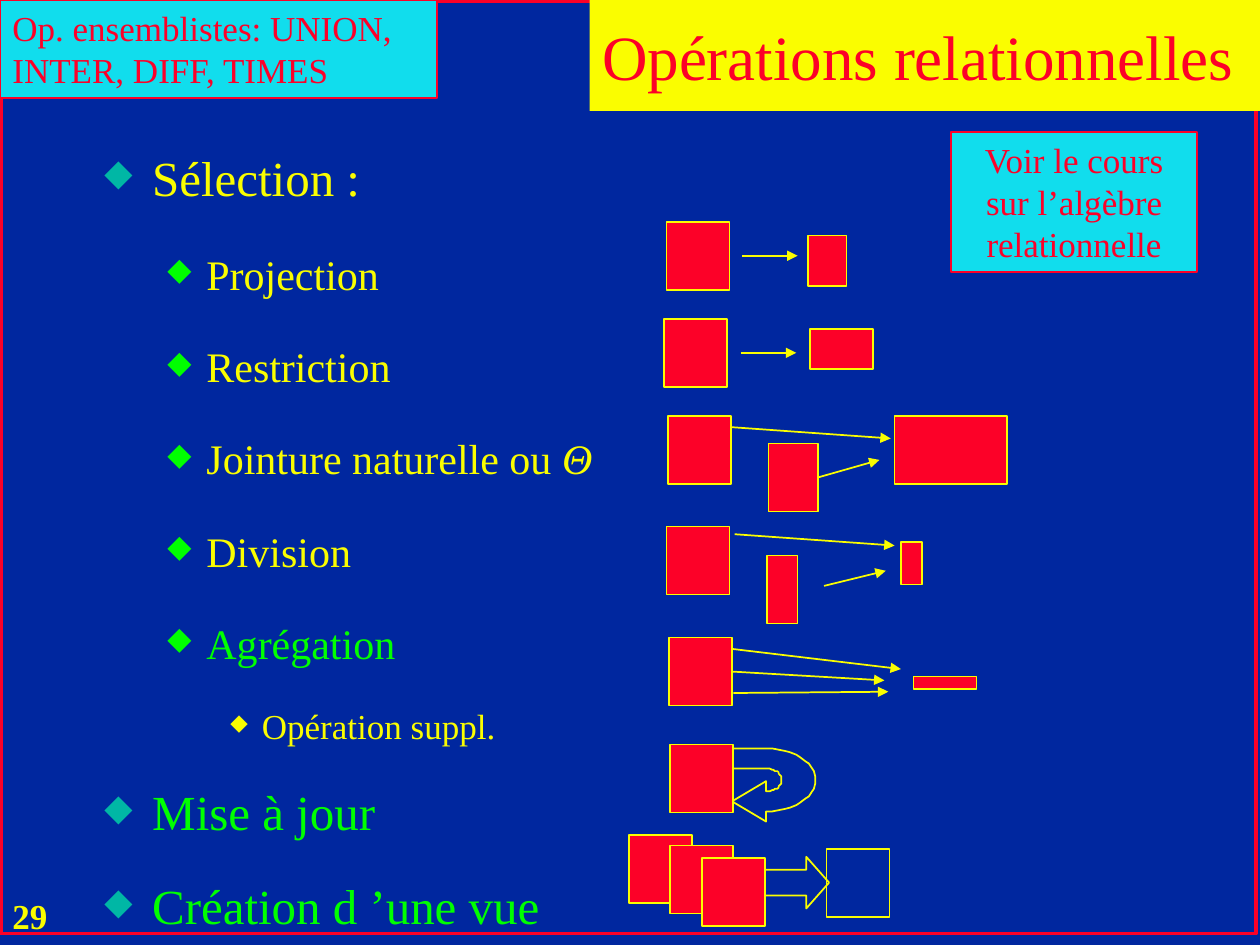
"""Build the relational operations slide."""
from lxml import etree
from pptx import Presentation
from pptx.dml.color import RGBColor
from pptx.enum.shapes import MSO_CONNECTOR, MSO_SHAPE
from pptx.enum.text import MSO_ANCHOR, PP_ALIGN
from pptx.oxml.ns import qn
from pptx.util import Pt

PX = 9144
FONT = "Times New Roman"
NAVY = RGBColor(0x00, 0x27, 0x9F)
RED = RGBColor(0xFC, 0x01, 0x28)
YELLOW = RGBColor(0xFA, 0xFD, 0x00)
CYAN = RGBColor(0x11, 0xDD, 0xED)
GREEN = RGBColor(0x00, 0xFF, 0x00)
TEAL = RGBColor(0x00, 0xB7, 0xA5)
RECT, ARROW = MSO_SHAPE.RECTANGLE, MSO_SHAPE.RIGHT_ARROW
STRAIGHT = MSO_CONNECTOR.STRAIGHT
LEFT, CENTER = PP_ALIGN.LEFT, PP_ALIGN.CENTER
TOP, MIDDLE = MSO_ANCHOR.TOP, MSO_ANCHOR.MIDDLE
RIGHT_SIDE = 3
TABLE_W, TABLE_H = 50, 54

LEVELS = [
    {"size": 28, "margin": 38, "hang": 38, "bullet": TEAL, "scale": 75, "spacing": 1.4},
    {"size": 24, "margin": 81, "hang": 31, "bullet": GREEN, "scale": 75, "spacing": 1.6},
    {"size": 20, "margin": 125, "hang": 25, "bullet": YELLOW, "scale": 65, "spacing": 1.6},
]
OUTLINE = [
    (0, "Sélection :", YELLOW, 1.0),
    (1, "Projection", YELLOW, None),
    (1, "Restriction", YELLOW, None),
    (1, "Jointure naturelle ou Θ", YELLOW, None),
    (1, "Division", YELLOW, None),
    (1, "Agrégation", GREEN, None),
    (2, "Opération suppl.", YELLOW, None),
    (0, "Mise à jour", GREEN, None),
    (0, "Création d ’une vue", GREEN, None),
]
SOURCES = [(529, 176), (527, 253), (530, 330), (529, 418)]
VIEW_SOURCES = [(499, 663), (532, 671), (557, 681)]
RESULTS = [
    (641, 187, 31, 40), (643, 261, 50, 32), (710, 330, 89, 54),
    (609, 441, 24, 54), (715, 430, 17, 34), (725, 537, 50, 10),
]
ARROWS = [
    (589, 203, 633, 203), (588, 280, 632, 280), (580, 339, 707, 348),
    (583, 424, 710, 433), (654, 465, 703, 453),
    (581, 515, 715, 531), (582, 550, 705, 549),
]
U_TURN = [
    (581, 636), (608, 652), (608, 644),
    ((629, 644), (647, 633), (647, 619)),
    ((647, 605), (629, 594), (608, 594)),
    (547, 594), (547, 610), (608, 610),
    ((615, 610), (620, 614), (620, 618)), (620, 620),
    ((620, 624), (615, 628), (608, 628)), (608, 620),
]


def bezier(points, steps=12):
    """Return points along a cubic curve, without its start."""
    curve = []
    for i in range(1, steps + 1):
        t = i / steps
        weights = ((1 - t) ** 3, 3 * t * (1 - t) ** 2, 3 * t * t * (1 - t), t ** 3)
        curve.append(tuple(sum(w * p[axis] for w, p in zip(weights, points))
                           for axis in (0, 1)))
    return curve


class Deck:
    """Hold the style and the current slide."""

    def __init__(self, prs):
        self.s = prs.slides.add_slide(prs.slide_layouts[6])
        self.s.background.fill.solid()
        self.s.background.fill.fore_color.rgb = NAVY

    def paint(self, sp, fill, line, width=1):
        """Set fill and outline and drop the shadow."""
        sp.shadow.inherit = False
        if fill is None:
            sp.fill.background()
        else:
            sp.fill.solid()
            sp.fill.fore_color.rgb = fill
        if line is None:
            sp.line.fill.background()
        else:
            sp.line.color.rgb = line
            sp.line.width = Pt(width)
        return sp

    def shape(self, x, y, w, h, fill=RED, line=YELLOW, width=1, kind=RECT):
        """Add a preset shape."""
        sp = self.s.shapes.add_shape(kind, x * PX, y * PX, w * PX, h * PX)
        return self.paint(sp, fill, line, width)

    def table(self, x, y, fill=RED):
        """Add the square that stands for a relation."""
        return self.shape(x, y, TABLE_W, TABLE_H, fill)

    def run(self, p, text, size, color, **extra):
        """Add a styled run."""
        r = p.add_run()
        r.text = text
        r.font.color.rgb = color
        for name, value in {"name": FONT, "size": Pt(size), **extra}.items():
            setattr(r.font, name, value)

    def frame(self, sp, anchor=TOP, wrap=True):
        """Prepare a text frame."""
        tf = sp.text_frame
        for name, value in {"word_wrap": wrap, "vertical_anchor": anchor}.items():
            setattr(tf, name, value)
        return tf

    def label(self, sp, text, size, color, align=LEFT, anchor=TOP, wrap=True, **extra):
        """Write one paragraph in a shape."""
        p = self.frame(sp, anchor, wrap).paragraphs[0]
        p.alignment = align
        self.run(p, text, size, color, **extra)

    def box(self, x, y, w, h):
        """Add an empty text box."""
        return self.s.shapes.add_textbox(x * PX, y * PX, w * PX, h * PX)

    def outline(self, x, y, w, h, items):
        """Add the bulleted outline."""
        tf = self.frame(self.box(x, y, w, h))
        for i, (level, text, color, spacing) in enumerate(items):
            style = LEVELS[level]
            p = tf.add_paragraph() if i else tf.paragraphs[0]
            for name, value in {"level": level, "space_before": Pt(6.7),
                                "line_spacing": spacing or style["spacing"]}.items():
                setattr(p, name, value)
            self.bullet(p, style)
            plain, theta, _ = text.partition("Θ")
            self.run(p, plain, style["size"], color)
            if theta:
                self.run(p, theta, style["size"], color, italic=True)

    def bullet(self, p, style):
        """Give a paragraph its diamond and hanging indent."""
        ppr = p._p.get_or_add_pPr()
        ppr.set("marL", str(style["margin"] * PX))
        ppr.set("indent", str(-style["hang"] * PX))
        color = etree.SubElement(ppr, qn("a:buClr"))
        etree.SubElement(color, qn("a:srgbClr"), val=str(style["bullet"]))
        etree.SubElement(ppr, qn("a:buSzPct"), val=str(style["scale"] * 1000))
        etree.SubElement(ppr, qn("a:buChar"), char="◆")

    def arrow(self, x1, y1, x2, y2, source=None):
        """Add an arrow, joined to the right side of its source if given."""
        c = self.s.shapes.add_connector(STRAIGHT, x1 * PX, y1 * PX, x2 * PX, y2 * PX)
        if source is not None:
            c.begin_connect(source, RIGHT_SIDE)
        c.line.color.rgb = YELLOW
        c.line.width = Pt(1)
        etree.SubElement(c.line._get_or_add_ln(), qn("a:tailEnd"), type="triangle")
        etree.SubElement(c._element.spPr, qn("a:effectLst"))

    def freeform(self, segments):
        """Add an unfilled closed outline of lines and curves."""
        points = [segments[0]]
        for seg in segments[1:]:
            points += bezier((points[-1], *seg)) if len(seg) == 3 else [seg]
        builder = self.s.shapes.build_freeform(*points[0], scale=PX)
        builder.add_line_segments(points[1:], close=True)
        self.paint(builder.convert_to_shape(), None, YELLOW)


def main():
    """Draw the slide and save it."""
    prs = Presentation()
    prs.slide_width, prs.slide_height = 1000 * PX, 750 * PX
    deck = Deck(prs)
    deck.label(deck.box(0, 705, 69, 43), "29", 20, YELLOW, wrap=False, bold=True)
    deck.shape(1, 1, 996, 740, None, RED, 2)
    title = deck.shape(468, 0, 532, 88, YELLOW, None)
    deck.label(title, "Opérations relationnelles", 36, RED, anchor=MIDDLE)
    deck.outline(73, 112, 431, 638, OUTLINE)

    for x, y in SOURCES:
        deck.table(x, y)
    for result in RESULTS:
        deck.shape(*result)
    for arrow in ARROWS:
        deck.arrow(*arrow)
    joined = deck.shape(610, 352, 39, 54)
    deck.arrow(649, 379, 698, 365, joined)
    aggregated = deck.table(531, 506)
    deck.arrow(581, 533, 702, 540, aggregated)

    deck.freeform(U_TURN)
    deck.table(532, 591)
    deck.table(656, 674, None)
    view = deck.shape(586, 680, 72, 41, None, kind=ARROW)
    view.adjustments[0], view.adjustments[1] = 0.5, 0.44
    for x, y in VIEW_SOURCES:
        deck.table(x, y)

    course = deck.shape(755, 105, 195, 111, CYAN, RED)
    deck.label(course, "Voir le cours sur l’algèbre relationnelle", 20, RED, CENTER)
    sets = deck.shape(0, 0, 347, 78, CYAN, RED)
    deck.label(sets, "Op. ensemblistes: UNION, INTER, DIFF, TIMES", 20, RED)
    prs.save("out.pptx")


if __name__ == "__main__":
    main()
